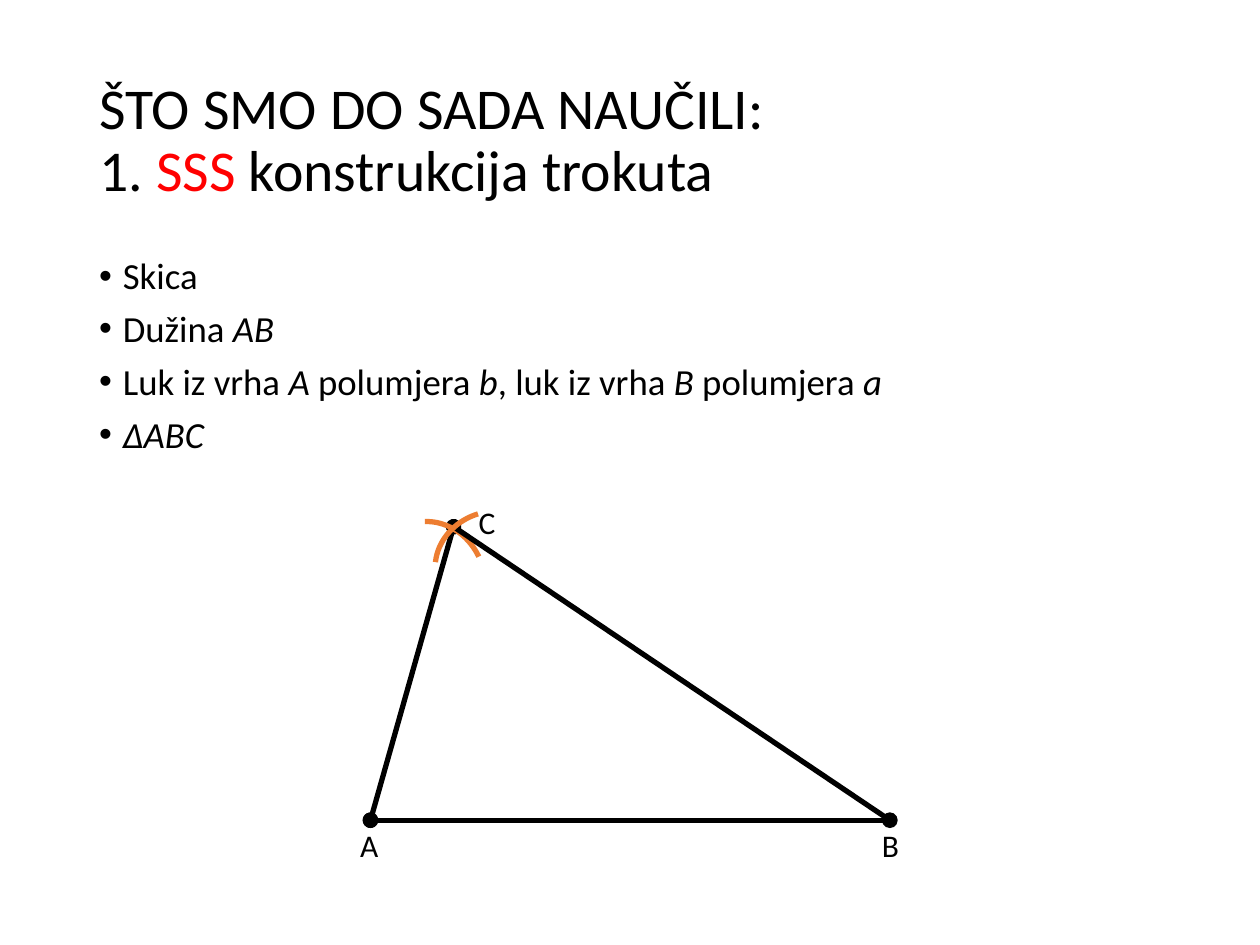
from lxml.etree import SubElement
from pptx import Presentation
from pptx.dml.color import RGBColor
from pptx.enum.shapes import MSO_CONNECTOR, MSO_SHAPE
from pptx.enum.text import MSO_ANCHOR, MSO_AUTO_SIZE as AUTO, PP_ALIGN
from pptx.oxml.ns import qn
from pptx.util import Pt

BLACK = RGBColor(0x00, 0x00, 0x00)
RED = RGBColor(0xFF, 0x00, 0x00)
ORANGE = RGBColor(0xED, 0x7D, 0x31)
FONT = "Calibri"
TITLE_SIZE, BODY_SIZE, LABEL_SIZE = 33, 21, 18
INDENT = 13.5

# Triangle vertices, in points
A = (211.7, 468.7)
B = (508.5, 468.7)
C = (259.2, 301)

# Each step is a list of (text, italic) runs
STEPS = [
    [("Skica", False)],
    [("Dužina ", False), ("AB", True)],
    [("Luk iz vrha ", False), ("A", True), (" polumjera ", False), ("b", True),
     (", luk iz vrha ", False), ("B", True), (" polumjera ", False), ("a", True)],
    [("ΔABC", True)],
]


def place(sp, left, top, width, height):
    sp.left, sp.top, sp.width, sp.height = Pt(left), Pt(top), Pt(width), Pt(height)


def add_run(p, text, size, color=BLACK, italic=False):
    r = p.add_run()
    r.text = text
    r.font.name = FONT
    r.font.size = Pt(size)
    r.font.italic = italic
    r.font.color.rgb = color


def fill_title(sp):
    place(sp, 49.5, 28.75, 621, 104.4)
    tf = sp.text_frame
    tf.auto_size = AUTO.NONE
    tf.vertical_anchor = MSO_ANCHOR.MIDDLE
    p = tf.paragraphs[0]
    p.alignment = PP_ALIGN.LEFT
    p.line_spacing = 0.9
    add_run(p, "ŠTO SMO DO SADA NAUČILI:", TITLE_SIZE)
    p.add_line_break()
    # The break takes the title size, so that it does not stretch the line
    SubElement(p._p[-1], qn("a:rPr"), sz=str(TITLE_SIZE * 100))
    add_run(p, "1. ", TITLE_SIZE)
    add_run(p, "SSS ", TITLE_SIZE, RED)
    add_run(p, "konstrukcija trokuta", TITLE_SIZE)


def fill_steps(sp):
    place(sp, 49.5, 143.75, 621, 131)
    tf = sp.text_frame
    tf.auto_size = AUTO.NONE
    for i, runs in enumerate(STEPS):
        p = tf.add_paragraph() if i else tf.paragraphs[0]
        p.line_spacing = 0.9
        p.space_before = Pt(7.5)
        pPr = p._p.get_or_add_pPr()
        pPr.set("marL", str(Pt(INDENT)))
        pPr.set("indent", str(-Pt(INDENT)))
        for text, italic in runs:
            add_run(p, text, BODY_SIZE, italic=italic)


def add_side(shapes, start, end, dots=False):
    line = shapes.add_connector(MSO_CONNECTOR.STRAIGHT, *map(Pt, start + end))
    line.line.color.rgb = BLACK
    line.line.width = Pt(3)
    if dots:
        ln = line.line._get_or_add_ln()
        SubElement(ln, qn("a:headEnd"), type="oval")
        SubElement(ln, qn("a:tailEnd"), type="oval")
    SubElement(line._element.spPr, qn("a:effectLst"))


def add_arc(shapes, left, top, rotation):
    sp = shapes.add_shape(MSO_SHAPE.ARC, Pt(left), Pt(top), Pt(59.8), Pt(67))
    sp.adjustments[0] = 173.246
    sp.adjustments[1] = 0
    sp.rotation = rotation
    sp.shadow.inherit = False
    sp.fill.background()
    sp.line.color.rgb = ORANGE
    sp.line.width = Pt(3)


def add_label(shapes, text, left, top, width, wrap=True):
    sp = shapes.add_textbox(Pt(left), Pt(top), Pt(width), Pt(29))
    tf = sp.text_frame
    tf.word_wrap = wrap
    tf.auto_size = AUTO.SHAPE_TO_FIT_TEXT
    add_run(tf.paragraphs[0], text, LABEL_SIZE)


def main():
    prs = Presentation()
    prs.slide_width, prs.slide_height = Pt(720), Pt(540)
    shapes = prs.slides.add_slide(prs.slide_layouts[1]).shapes

    # Title and construction steps
    fill_title(shapes.title)
    fill_steps(shapes.placeholders[1])

    # Side AB with its end labels
    add_side(shapes, B, A, dots=True)
    add_label(shapes, "A", 198.7, A[1], 26)
    add_label(shapes, "B", 496.8, B[1], 24.5, wrap=False)

    # Side AC and the arc from A
    add_side(shapes, C, A, dots=True)
    add_arc(shapes, 216.7, 297.4, 334.7)

    # Side BC and the arc from B
    add_side(shapes, C, B)
    add_arc(shapes, 252, 288.7, 253)
    add_label(shapes, "C", 266.4, 283.7, 20.2)

    prs.save("out.pptx")


if __name__ == "__main__":
    main()
